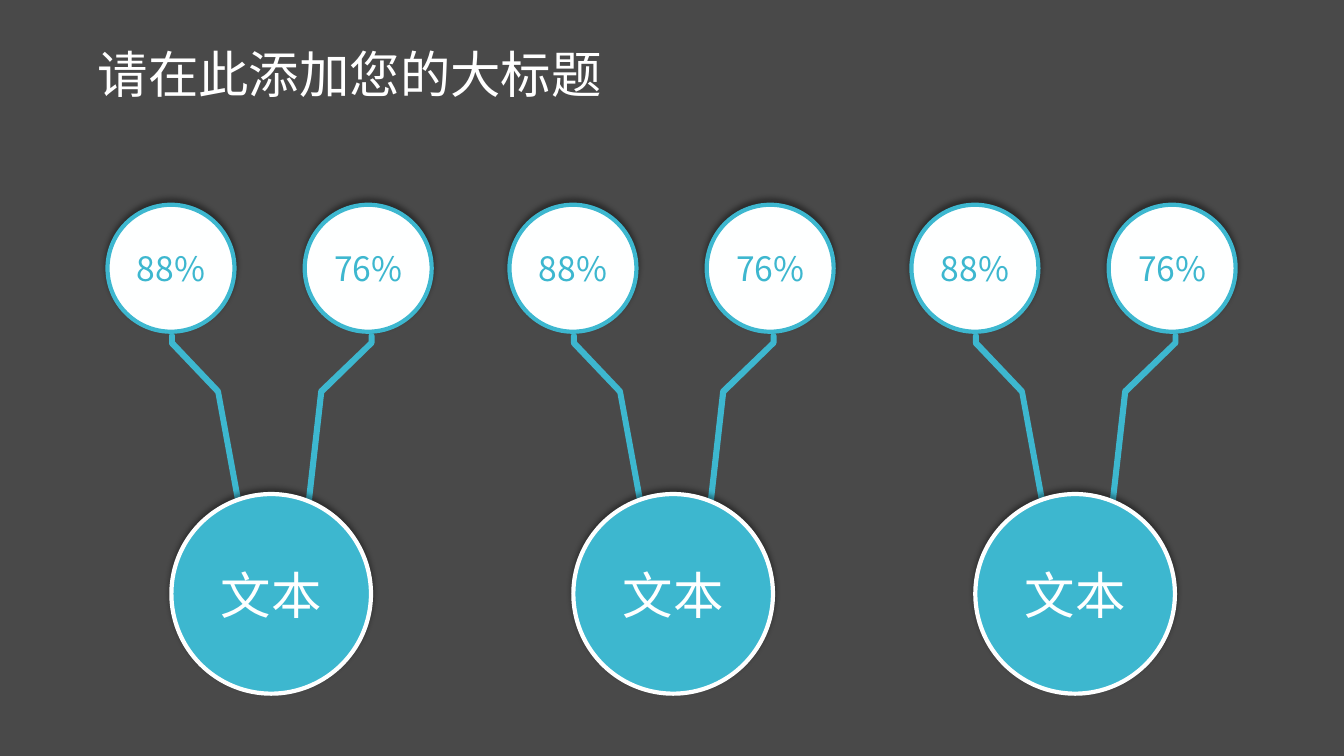
from lxml import etree
from pptx import Presentation
from pptx import util as u
from pptx.dml.color import RGBColor
from pptx.enum import shapes, text
from pptx.oxml import ns

COLORS = {"ground": "494949", "teal": "3DB7CF", "white": "FEFFFF",
          "title": "FFFFFF", "shadow": "000000"}
FONT = "Noto Sans CJK SC"
RATES = ["88%", "76%"]
RATE_SIZE, RATE_PITCH = 3.2, 4.97
HUB_SIZE, HUB_LEFT, HUB_TOP = 5.03, 1.61, 7.29
TREE_LEFT, TREE_TOP, TREE_PITCH = 2.71, 5.16, 10.13
STEMS = [
    [(3.33, 7.7), (3.25, 7.65), (2.72, 4.75), (1.56, 3.53), (1.55, 3.48),
     (1.55, 3.3), (1.57, 3.25), (1.63, 3.23), (1.68, 3.25), (1.7, 3.3),
     (1.7, 3.45), (2.84, 4.65), (2.86, 4.7), (3.4, 7.62), (3.38, 7.68)],
    [(5.05, 7.7), (5.0, 7.68), (4.98, 7.62), (5.31, 4.7), (5.33, 4.65),
     (6.58, 3.45), (6.58, 3.3), (6.6, 3.25), (6.65, 3.23), (6.71, 3.25),
     (6.73, 3.3), (6.73, 3.48), (6.71, 3.53), (5.46, 4.75), (5.13, 7.65)],
]


def rgb(key):
    return RGBColor.from_string(COLORS[key])


def add_run(paragraph, words, size, color):
    run = paragraph.add_run()
    run.text = words
    run.font.size = u.Pt(size)
    run.font.name = FONT
    run.font.color.rgb = rgb(color)
    east_asian = etree.SubElement(run.font._element, ns.qn("a:ea"))
    east_asian.set("typeface", FONT)


def add_upward_shadow(shape):
    shape.shadow.inherit = False
    effects = shape._element.spPr.find(ns.qn("a:effectLst"))
    shadow = etree.SubElement(
        effects, ns.qn("a:outerShdw"), blurRad=str(u.Pt(4)), dist=str(u.Pt(3)),
        dir="16200000", algn="ctr", rotWithShape="0")
    color = etree.SubElement(shadow, ns.qn("a:srgbClr"), val=COLORS["shadow"])
    etree.SubElement(color, ns.qn("a:alpha"), val="40000")


def add_circle(slide, left, top, size, words, points, fill, accent):
    circle = slide.shapes.add_shape(
        shapes.MSO_SHAPE.OVAL, u.Cm(left), u.Cm(top), u.Cm(size), u.Cm(size))
    circle.fill.solid()
    circle.fill.fore_color.rgb = rgb(fill)
    circle.line.color.rgb = rgb(accent)
    circle.line.width = u.Pt(3)
    add_upward_shadow(circle)
    frame = circle.text_frame
    frame.word_wrap = False
    frame.vertical_anchor = text.MSO_ANCHOR.MIDDLE
    label = frame.paragraphs[0]
    label.alignment = text.PP_ALIGN.CENTER
    add_run(label, words, points, accent)


def add_stems(slide, left, top):
    stems = slide.shapes.add_group_shape()
    for outline in STEMS:
        points = [(u.Cm(left + x), u.Cm(top + y)) for x, y in outline]
        builder = stems.shapes.build_freeform(*points[0])
        builder.add_line_segments(points[1:], close=True)
        stem = builder.convert_to_shape()
        stem.shadow.inherit = False
        stem.fill.solid()
        stem.fill.fore_color.rgb = rgb("teal")
        stem.line.fill.background()


def add_tree(slide, left, top):
    add_stems(slide, left, top)
    add_circle(slide, left + HUB_LEFT, top + HUB_TOP, HUB_SIZE,
               "文本", 36, "teal", "white")
    for column, rate in enumerate(RATES):
        add_circle(slide, left + column * RATE_PITCH, top, RATE_SIZE,
                   rate, 24, "white", "teal")


def add_title(slide, left, top, width, height):
    title = slide.shapes.title
    title.left, title.top = u.Cm(left), u.Cm(top)
    title.width, title.height = u.Cm(width), u.Cm(height)
    frame = title.text_frame
    frame.word_wrap = True
    frame.vertical_anchor = text.MSO_ANCHOR.MIDDLE
    heading = frame.paragraphs[0]
    heading.alignment = text.PP_ALIGN.LEFT
    heading.line_spacing = 0.9
    add_run(heading, "请在此添加您的大标题", 36, "title")


def main():
    deck = Presentation()
    deck.slide_width, deck.slide_height = u.Cm(33.87), u.Cm(19.05)
    slide = deck.slides.add_slide(deck.slide_layouts[5])
    slide.background.fill.solid()
    slide.background.fill.fore_color.rgb = rgb("ground")
    add_title(slide, 2.21, 0.76, 27.79, 2.36)
    for position in range(3):
        add_tree(slide, TREE_LEFT + position * TREE_PITCH, TREE_TOP)
    deck.save("out.pptx")


if __name__ == "__main__":
    main()
